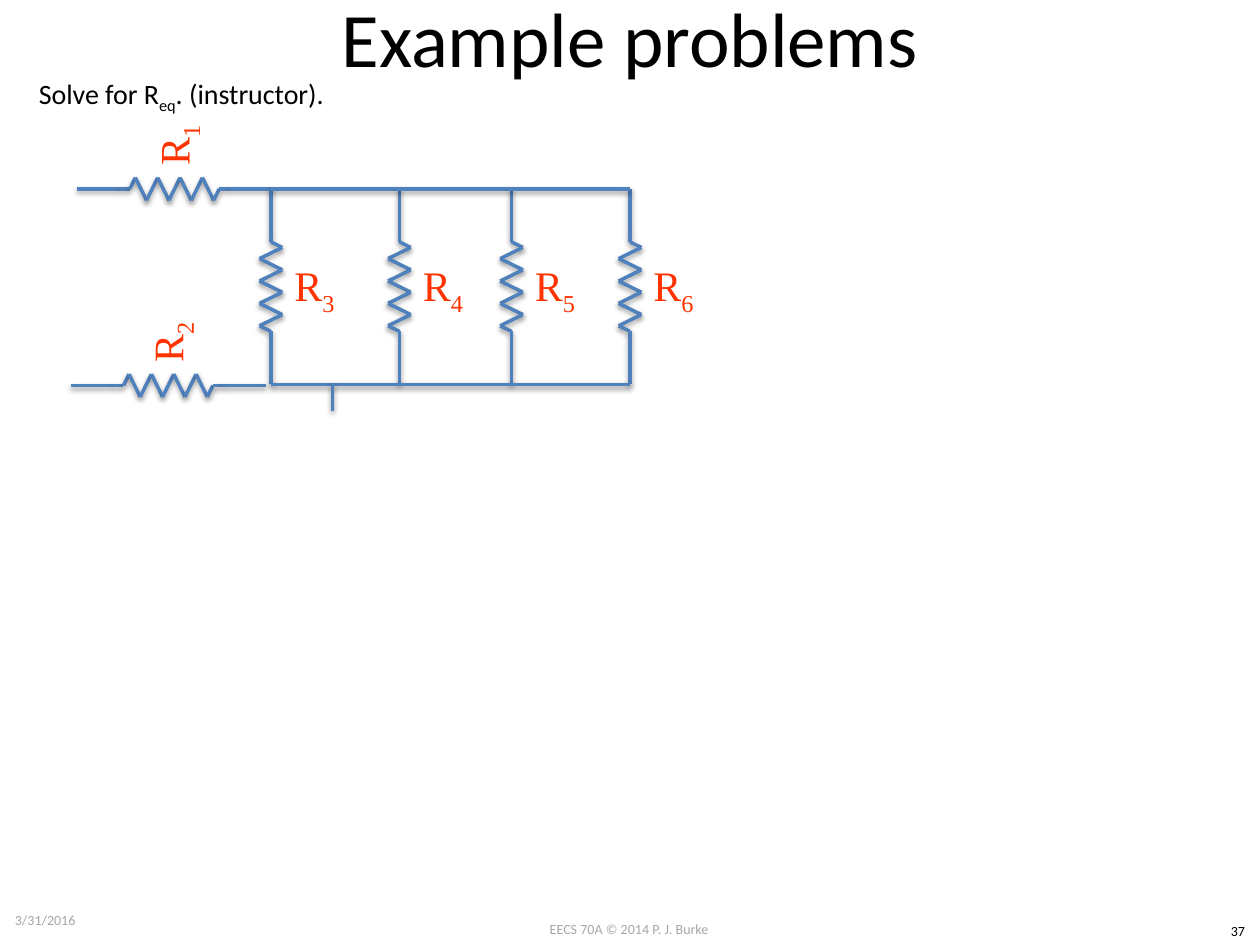
from itertools import pairwise

from lxml.etree import SubElement
from pptx import Presentation
from pptx.dml.color import RGBColor
from pptx.enum.shapes import MSO_CONNECTOR
from pptx.enum.text import MSO_ANCHOR as Anchor, PP_ALIGN as Align
from pptx.oxml.ns import qn
from pptx.util import Inches, Pt

COLORS = {"black": "000000", "gray": "A6A6A6", "label": "FF3300",
          "wire": "4F81BD", "shadow": "000000"}

TITLE = "Example problems"
QUESTION = [("Solve for R", False), ("eq", True), (". (instructor).", False)]
DATE = "3/31/2016"
FOOTER = "EECS 70A © 2014 P. J. Burke"
PAGE_NUMBER = "37"

# Circuit rails and branches, in inches
TOP, BOTTOM = 1.5, 3.05
LEFT, RIGHT = 2.15, 5
SERIES = [("1", 0.61, TOP), ("2", 0.56, BOTTOM + 0.01)]
PARALLEL = [("3", LEFT), ("4", 3.17), ("5", 4.06), ("6", RIGHT)]
WIRES = [((LEFT, BOTTOM), (RIGHT, BOTTOM)), ((LEFT, TOP), (RIGHT, TOP)),
         ((2.64, 3.26), (2.64, BOTTOM))]

# One resistor as (distance along its axis, offset to its label side)
LENGTH = BOTTOM - TOP
ZIG_START, ZIG_END, SWING = 0.42, 1.13, 0.09
LEAD = 0.34
STEP = (ZIG_END - ZIG_START) / 8
ZIGZAG = [(ZIG_START + (turn + 0.5) * STEP, SWING * (-1) ** turn) for turn in range(8)]
RESISTOR = [(0, 0), (LEAD, 0), (ZIG_START, 0), *ZIGZAG,
            (ZIG_END, 0), (LENGTH - LEAD, 0), (LENGTH, 0)]
LABEL_CENTER = (0.79, 0.345)
LABEL_SIZE = (1.19, 0.73)


def write(frame, spans, size, color="black", font="Calibri", align=Align.LEFT,
          anchor=Anchor.TOP, wrap=True):
    """Fill a text frame with a string or with (text, is_subscript) pairs."""
    frame.word_wrap = wrap
    frame.vertical_anchor = anchor
    para = frame.paragraphs[0]
    para.alignment = align
    for text, subscript in [(spans, False)] if isinstance(spans, str) else spans:
        span = para.add_run()
        span.text = text
        span.font.size = Pt(size)
        span.font.name = font
        span.font.color.rgb = RGBColor.from_string(COLORS[color])
        if subscript:
            span._r.get_or_add_rPr().set("baseline", "-25000")


def add_text(shapes, area, spans, size, **style):
    box = shapes.add_textbox(*map(Inches, area))
    write(box.text_frame, spans, size, **style)
    return box


def add_wire(shapes, start, end):
    wire = shapes.add_connector(MSO_CONNECTOR.STRAIGHT, *map(Inches, (*start, *end)))
    wire.line.color.rgb = RGBColor.from_string(COLORS["wire"])
    wire.line.width = Pt(2)
    effects = SubElement(wire._element.spPr, qn("a:effectLst"))
    shadow = SubElement(effects, qn("a:outerShdw"), blurRad=str(Pt(3.1)),
                        dist=str(Pt(1.6)), dir="5400000", rotWithShape="0")
    tint = SubElement(shadow, qn("a:srgbClr"), val=COLORS["shadow"])
    SubElement(tint, qn("a:alpha"), val="38000")


def add_resistor(page, number, x, y, horizontal=False):
    """Draw a resistor from (x, y), running right or down, with its label."""
    def place(along, offset):
        return (x + along, y - offset) if horizontal else (x + offset, y + along)

    shapes = page.shapes.add_group_shape().shapes
    width, height = LABEL_SIZE
    center_x, center_y = place(*LABEL_CENTER)
    area = (center_x - width / 2, center_y - height / 2, width, height)
    label = add_text(shapes, area, [("R", False), (number, True)], 24, color="label",
                     font="Times New Roman", align=Align.CENTER, anchor=Anchor.MIDDLE)
    label.rotation = 270 if horizontal else 0
    for start, end in pairwise(RESISTOR):
        add_wire(shapes, place(*start), place(*end))


def main():
    deck = Presentation()
    deck.slide_width, deck.slide_height = Inches(10), Inches(7.5)
    page = deck.slides.add_slide(deck.slide_layouts[5])

    title = page.shapes.title
    title.left, title.top, title.width, title.height = map(Inches, (0.5, -0.33, 9, 1.25))
    write(title.text_frame, TITLE, 44, align=Align.CENTER, anchor=Anchor.MIDDLE)

    for number, x, y in SERIES:
        add_resistor(page, number, x, y, horizontal=True)
    for number, x in PARALLEL:
        add_resistor(page, number, x, TOP)
    for start, end in WIRES:
        add_wire(page.shapes, start, end)

    add_text(page.shapes, (0.21, 0.56, 2.6, 0.37), QUESTION, 16, wrap=False)
    add_text(page.shapes, (0.02, 7.1, 2.33, 0.4), DATE, 8, color="gray",
             anchor=Anchor.MIDDLE)
    add_text(page.shapes, (3.83, 7.26, 2.33, 0.24), FOOTER, 8, color="gray",
             align=Align.CENTER)
    add_text(page.shapes, (9.65, 7.27, 0.35, 0.24), PAGE_NUMBER, 8, align=Align.CENTER)
    deck.save("out.pptx")


if __name__ == "__main__":
    main()
